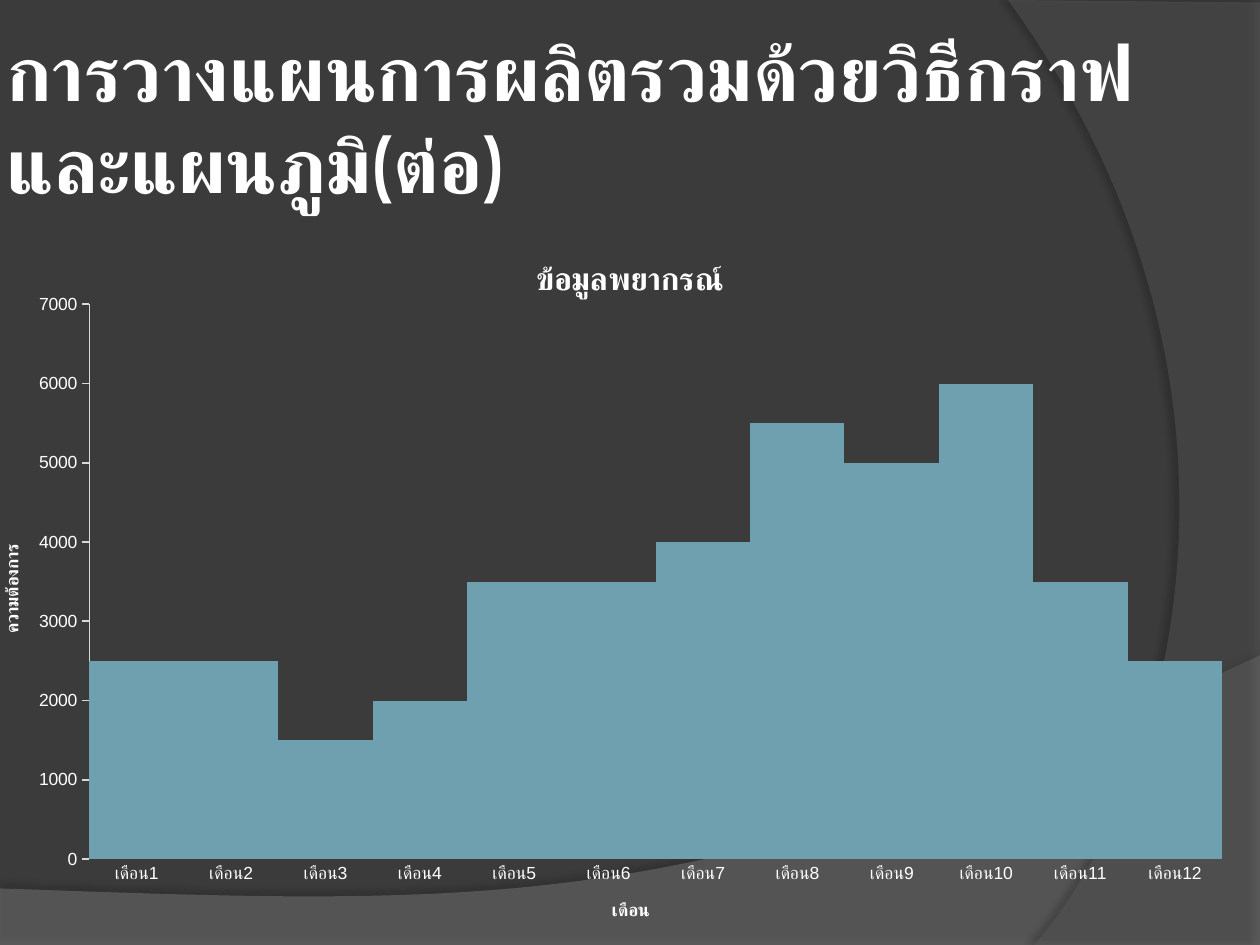
import dataclasses

import lxml.etree
import pptx
import pptx.chart.data
import pptx.dml.color
import pptx.enum.chart
import pptx.enum.text
import pptx.oxml
import pptx.oxml.ns
import pptx.util

Cm = pptx.util.Cm
Pt = pptx.util.Pt
qn = pptx.oxml.ns.qn


@dataclasses.dataclass(frozen=True)
class Theme:
    """Colours, fonts and type sizes of the deck."""

    background: str = "3B3B3B"
    floor: str = "7F7F7F"
    side: str = "5E5E5E"
    shadow: str = "000000"
    text: str = "FFFFFF"
    axis: str = "D9D9D9"
    bar: str = "6EA0B0"
    title_font: str = "Cabin"
    chart_font: str = "Arial"
    title_size: int = 44
    chart_title_size: int = 18
    chart_size: int = 10


THEME = Theme()
DEMAND = [2500, 2500, 1500, 2000, 3500, 3500, 4000, 5500, 5000, 6000, 3500, 2500]


def rgb(value):
    """Turn a hex string into a colour."""
    return pptx.dml.color.RGBColor.from_string(value)


def apply_format(target, values):
    """Set each attribute named in a dict."""
    for name, value in values.items():
        setattr(target, name, value)


def format_font(font, name, size, bold):
    """Give a font its face, size, weight and the text colour."""
    apply_format(font, {"name": name, "size": Pt(size), "bold": bold})
    font.color.rgb = rgb(THEME.text)


def curve_points(start, first, second, end, steps=60):
    """Sample a cubic curve evenly."""
    points = []
    for step in range(steps + 1):
        t = step / steps
        weights = ((1 - t) ** 3, 3 * t * (1 - t) ** 2, 3 * t**2 * (1 - t), t**3)
        controls = (start, first, second, end)
        points.append(tuple(sum(w * c[axis] for w, c in zip(weights, controls)) for axis in (0, 1)))
    return points


def add_sweep(slide, box, curve, corners, color, alpha, shadow):
    """Draw a translucent curved panel whose points are in cm from its box corner."""
    left, top = box
    points = [(Cm(left + x), Cm(top + y)) for x, y in curve_points(*curve) + corners]
    builder = slide.shapes.build_freeform(*points[0])
    builder.add_line_segments(points[1:], close=True)
    shape = builder.convert_to_shape()
    shape.fill.solid()
    shape.fill.fore_color.rgb = rgb(color)
    shape.line.fill.background()
    shape.shadow.inherit = False
    properties = shape._element.spPr
    fill_color = properties.find(qn("a:solidFill")).find(qn("a:srgbClr"))
    lxml.etree.SubElement(fill_color, qn("a:alpha"), val=str(alpha * 1000))
    opacity, blur, distance, direction = shadow
    outer = lxml.etree.SubElement(
        properties.find(qn("a:effectLst")), qn("a:outerShdw"),
        blurRad=str(Pt(blur)), dist=str(Pt(distance)), dir=str(direction * 60000),
        algn="ctr", rotWithShape="0")
    shadow_color = lxml.etree.SubElement(outer, qn("a:srgbClr"), val=THEME.shadow)
    lxml.etree.SubElement(shadow_color, qn("a:alpha"), val=str(opacity * 1000))


def add_backdrop(slide):
    """Fill the background and add the two curved panels."""
    slide.background.fill.solid()
    slide.background.fill.fore_color.rgb = rgb(THEME.background)
    add_sweep(slide, (0, 13.21), ((25.4, 0), (14.2, 5.31), (9.93, 5.05), (0, 4.7)),
              [(0, 5.86), (25.4, 5.86)], THEME.floor, 45, (35, 4, 3.5, 270))
    add_sweep(slide, (20.32, 0), ((0.53, 19.05), (3.43, 15.72), (5.54, 7.62), (0, 0)),
              [(5.08, 0.05), (5.08, 19.05)], THEME.side, 40, (45, 4, 4, 180))


def add_title(slide, box, text):
    """Place and format the title placeholder in front of the backdrop."""
    title = slide.shapes.title
    slide.shapes._spTree.append(title._element)
    apply_format(title, dict(zip(("left", "top", "width", "height"), box)))
    frame = title.text_frame
    margins = ("margin_left", "margin_top", "margin_right", "margin_bottom")
    apply_format(frame, {
        **dict.fromkeys(margins, Cm(0.13)),
        "text": text,
        "word_wrap": True,
        "auto_size": pptx.enum.text.MSO_AUTO_SIZE.NONE,
        "vertical_anchor": pptx.enum.text.MSO_ANCHOR.MIDDLE,
    })
    paragraph = frame.paragraphs[0]
    paragraph.alignment = pptx.enum.text.PP_ALIGN.LEFT
    format_font(paragraph.runs[0].font, THEME.title_font, THEME.title_size, True)


def set_heading(owner, text, size):
    """Give a chart or an axis its bold title."""
    owner.has_title = True
    heading = owner.chart_title if hasattr(owner, "chart_title") else owner.axis_title
    heading.text_frame.text = text
    run = heading.text_frame.paragraphs[0].runs[0]
    format_font(run.font, THEME.chart_font, size, True)


def set_plot_layout(chart, x, y, w, h):
    """Fix the inner plot area as fractions of the chart."""
    area = chart._chartSpace.chart.plotArea
    for old in area.findall(qn("c:layout")):
        area.remove(old)
    layout = lxml.etree.Element(qn("c:layout"))
    manual = lxml.etree.SubElement(layout, qn("c:manualLayout"))
    values = {"layoutTarget": "inner", "xMode": "edge", "yMode": "edge",
              "x": x, "y": y, "w": w, "h": h}
    for name, value in values.items():
        lxml.etree.SubElement(manual, qn(f"c:{name}"), val=str(value))
    area.insert(0, layout)


def add_forecast_chart(slide, box):
    """Add the monthly demand histogram."""
    data = pptx.chart.data.CategoryChartData()
    data.categories = [f"เดือน{month}" for month in range(1, len(DEMAND) + 1)]
    data.add_series("Series 1", DEMAND)
    kind = pptx.enum.chart.XL_CHART_TYPE.COLUMN_CLUSTERED
    chart = slide.shapes.add_chart(kind, *box, data).chart
    chart.has_legend = False
    format_font(chart.font, THEME.chart_font, THEME.chart_size, False)
    set_heading(chart, "ข้อมูลพยากรณ์", THEME.chart_title_size)
    set_plot_layout(chart, 0.071, 0.097, 0.899, 0.782)

    plot = chart.plots[0]
    apply_format(plot, {"gap_width": 0, "vary_by_categories": False})
    fill = plot.series[0].format.fill
    fill.solid()
    fill.fore_color.rgb = rgb(THEME.bar)

    ticks = pptx.enum.chart.XL_TICK_MARK
    axes = (
        (chart.category_axis, "เดือน", {"major_tick_mark": ticks.NONE}),
        (chart.value_axis, "ความต้องการ",
         {"major_tick_mark": ticks.OUTSIDE, "minimum_scale": 0,
          "maximum_scale": 7000, "major_unit": 1000}),
    )
    for axis, text, values in axes:
        apply_format(axis, {"has_major_gridlines": False,
                            "minor_tick_mark": ticks.NONE, **values})
        set_heading(axis, text, THEME.chart_size)
    chart.category_axis.format.line.fill.background()
    value_line = chart.value_axis.format.line
    value_line.width = Pt(1)
    value_line.color.rgb = rgb(THEME.axis)


def main():
    """Build the slide and save it."""
    presentation = pptx.Presentation()
    apply_format(presentation, {"slide_width": Cm(25.4), "slide_height": Cm(19.05)})
    slide = presentation.slides.add_slide(presentation.slide_layouts[5])
    add_backdrop(slide)
    add_title(slide, (Cm(0), Cm(0.76), Cm(25.4), Cm(3.18)),
              "การวางแผนการผลิตรวมด้วยวิธีกราฟและแผนภูมิ(ต่อ)")
    add_forecast_chart(slide, (Cm(0), Cm(4.75), Cm(25.4), Cm(14.3)))
    presentation.save("out.pptx")


if __name__ == "__main__":
    main()
